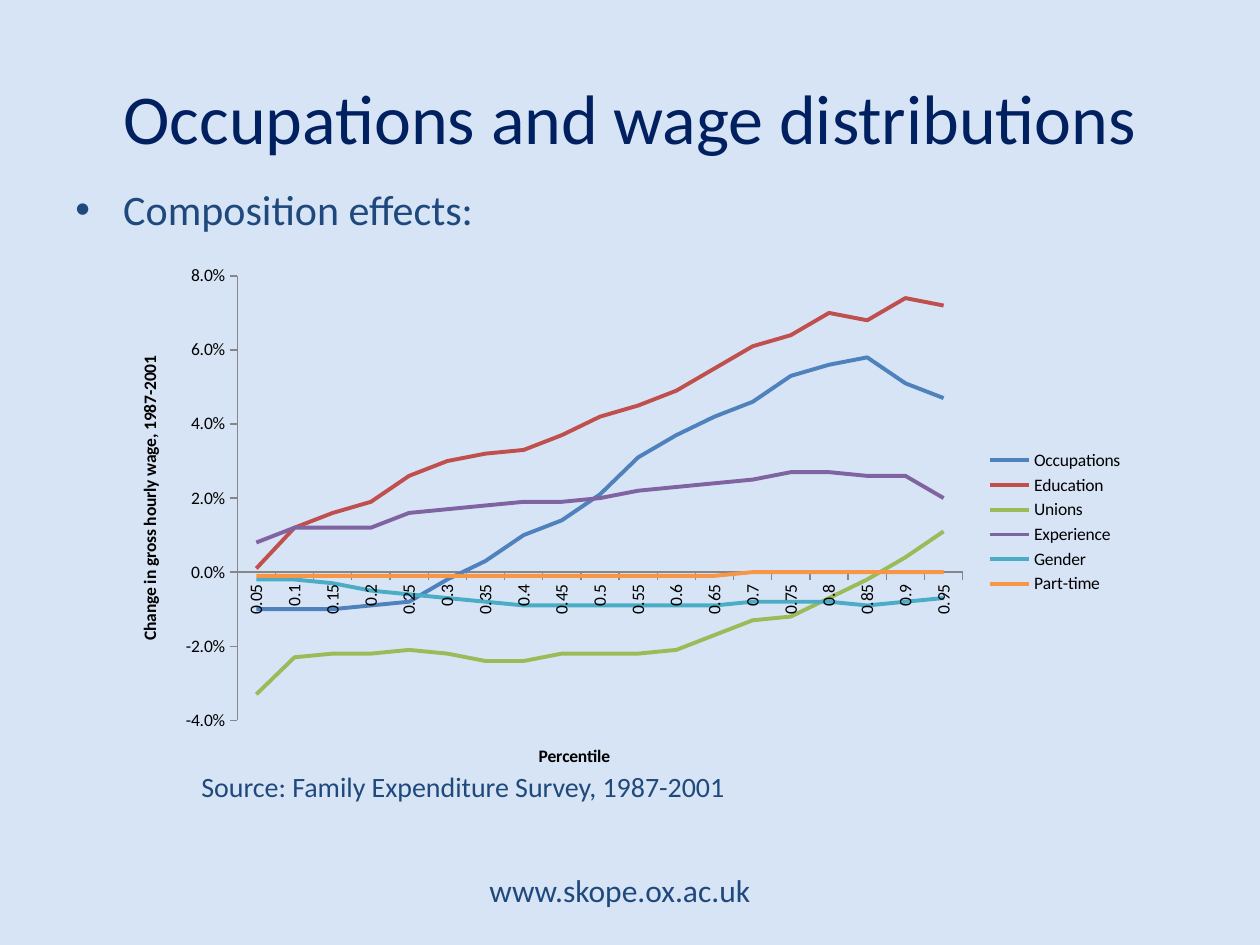
"""Build a slide with a line chart of composition effects on wages."""
from lxml import etree
from pptx import Presentation
from pptx.chart.data import CategoryChartData
from pptx.dml.color import RGBColor
from pptx.enum.chart import XL_CHART_TYPE as Kind, XL_LEGEND_POSITION as Side, XL_TICK_MARK as Tick
from pptx.enum.text import MSO_ANCHOR as Anchor, PP_ALIGN as Align
from pptx.oxml import parse_xml
from pptx.oxml.ns import nsdecls, qn
from pptx.util import Inches, Pt

FONT = "Calibri"
NAVY, BLUE, GREY, BLACK = "002060", "1F497D", "868686", "000000"
WIDE, HIGH = 10, 7.5
TEXTS = [
    ("www.skope.ox.ac.uk", (3.2, 6.86, 3.44, 0.4),
     dict(size=18, align=Align.CENTER, anchor=Anchor.MIDDLE)),
    ("Occupations and wage distributions", (0.5, 0.3, 9, 1.25),
     dict(size=40, color=NAVY, align=Align.CENTER, anchor=Anchor.MIDDLE)),
    ("Composition effects:", (0.5, 1.41, 9, 0.5), dict(size=24, bullet="•")),
    ("Source: Family Expenditure Survey, 1987-2001", (1.5, 6.06, 7, 0.37), dict(size=16)),
]
PLOT = dict(x=0.12, y=0.04, w=0.71, h=0.83)
CATS = [f"{n * 0.05:.2f}".rstrip("0") for n in range(1, 20)]
SERIES = [
    ("Occupations", "4F81BD", [-10, -10, -10, -9, -8, -2, 3, 10, 14, 21, 31, 37, 42, 46, 53, 56, 58, 51, 47]),
    ("Education", "C0504D", [1, 12, 16, 19, 26, 30, 32, 33, 37, 42, 45, 49, 55, 61, 64, 70, 68, 74, 72]),
    ("Unions", "9BBB59",
     [-33, -23, -22, -22, -21, -22, -24, -24, -22, -22, -22, -21, -17, -13, -12, -7, -2, 4, 11]),
    ("Experience", "8064A2", [8, 12, 12, 12, 16, 17, 18, 19, 19, 20, 22, 23, 24, 25, 27, 27, 26, 26, 20]),
    ("Gender", "4BACC6", [-2, -2, -3, -5, -6, -7, -8, -9, -9, -9, -9, -9, -9, -8, -8, -8, -9, -8, -7]),
    ("Part-time", "F79646", [-1] * 13 + [0] * 6),
]


def rgb(code):
    return RGBColor.from_string(code)


def style(font, size, color, bold=False):
    font.name, font.size, font.bold = FONT, Pt(size), bold
    font.color.rgb = rgb(color)


def write(slide, text, spot, size=16, color=BLUE, align=Align.LEFT, anchor=Anchor.TOP, bullet=None):
    frame = slide.shapes.add_textbox(*map(Inches, spot)).text_frame
    frame.word_wrap, frame.vertical_anchor = True, anchor
    para = frame.paragraphs[0]
    para.alignment = align
    if bullet:
        props = para._p.get_or_add_pPr()
        props.set("marL", str(Inches(0.38)))
        props.set("indent", str(-Inches(0.38)))
        etree.SubElement(props, qn("a:buFont")).set("typeface", "Arial")
        etree.SubElement(props, qn("a:buChar")).set("char", bullet)
    run = para.add_run()
    run.text = text
    style(run.font, size, color)


def dress(axis, title):
    axis.has_major_gridlines = False
    axis.major_tick_mark, axis.minor_tick_mark = Tick.OUTSIDE, Tick.NONE
    axis.format.line.color.rgb = rgb(GREY)
    axis.format.line.width = Pt(0.75)
    style(axis.tick_labels.font, 10, BLACK)
    run = axis.axis_title.text_frame.paragraphs[0].add_run()
    run.text = title
    style(run.font, 10, BLACK, bold=True)


def place(chart):
    area = chart._chartSpace.chart.plotArea
    for old in area.findall(qn("c:layout")):
        area.remove(old)
    modes = "".join(f'<c:{k}Mode val="edge"/>' for k in "xy")
    sizes = "".join(f'<c:{k} val="{v}"/>' for k, v in PLOT.items())
    area.insert(0, parse_xml(
        f'<c:layout {nsdecls("c")}><c:manualLayout><c:layoutTarget val="inner"/>'
        f'{modes}{sizes}</c:manualLayout></c:layout>'))


def draw(slide):
    data = CategoryChartData(number_format="0.0%")
    data.categories = CATS
    for name, _, vals in SERIES:
        data.add_series(name, [v / 1000 for v in vals])
    spot = map(Inches, (0.91, 2.02, 8.11, 4.25))
    chart = slide.shapes.add_chart(Kind.LINE, *spot, data).chart
    style(chart.font, 10, BLACK)
    chart.has_title = False
    chart.has_legend = True
    chart.legend.position, chart.legend.include_in_layout = Side.RIGHT, False
    style(chart.legend.font, 10, BLACK)
    chart.plots[0].vary_by_categories = False
    for line, (_, color, _) in zip(chart.plots[0].series, SERIES):
        line.smooth = False
        line.format.line.color.rgb = rgb(color)
        line.format.line.width = Pt(2.25)
    cat, val = chart.category_axis, chart.value_axis
    dress(cat, "Percentile")
    dress(val, "Change in gross hourly wage, 1987-2001")
    cat._element.find(qn("c:txPr")).find(qn("a:bodyPr")).set("rot", "-5400000")
    val.minimum_scale, val.maximum_scale, val.major_unit = -0.04, 0.08, 0.02
    val.tick_labels.number_format = "0.0%"
    val.tick_labels.number_format_is_linked = False
    place(chart)


def main():
    deck = Presentation()
    deck.slide_width, deck.slide_height = Inches(WIDE), Inches(HIGH)
    slide = deck.slides.add_slide(deck.slide_layouts[6])
    fill = slide.background.fill
    fill.solid()
    fill.fore_color.rgb = rgb("D7E4F5")
    for text, spot, look in TEXTS:
        write(slide, text, spot, **look)
    draw(slide)
    deck.save("out.pptx")


if __name__ == "__main__":
    main()
